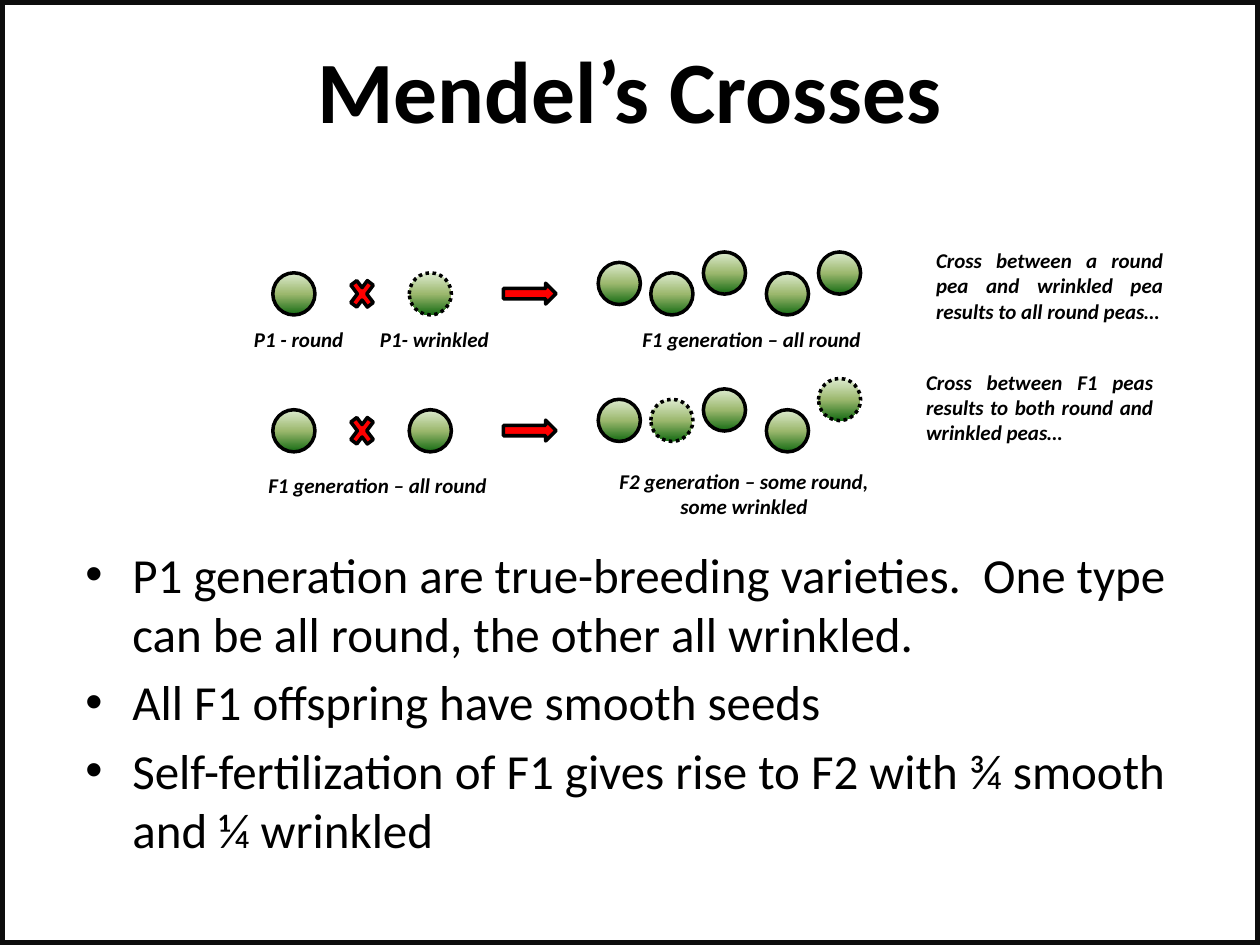
from copy import deepcopy

from pptx import Presentation
from pptx.dml.color import RGBColor
from pptx.enum.dml import MSO_LINE
from pptx.enum.shapes import MSO_SHAPE as SHAPE
from pptx.enum.text import MSO_ANCHOR as ANCHOR, PP_ALIGN as ALIGN
from pptx.oxml.ns import qn
from pptx.util import Cm, Pt

COLORS = {"ink": "000000", "frame": "0D0D0D", "red": "FF0000",
          "light": "DDEBCF", "mid": "9CB86E", "dark": "156B13"}
SHADES = [(0, "light"), (0.5, "mid"), (1, "dark")]
NOTE = {"size": Pt(12), "bold": True, "italic": True}
PEA = 0.85
STEP = 0.21  # vertical unit by which offspring are raised


def color(name):
    return RGBColor.from_string(COLORS[name])


def add_text(slide, box, lines, style, align=ALIGN.LEFT, wrap=True, anchor=ANCHOR.TOP):
    frame = slide.shapes.add_textbox(*map(Cm, box)).text_frame
    frame.word_wrap, frame.vertical_anchor = wrap, anchor
    for i, line in enumerate(lines):
        para = frame.paragraphs[0] if i == 0 else frame.add_paragraph()
        para.alignment = align
        run = para.add_run()
        run.text = line
        for key, value in {"name": "Calibri", **style}.items():
            setattr(run.font, key, value)
        run.font.color.rgb = color("ink")
    return frame


def add_mark(slide, kind, box, fill=None, line="ink", width=2):
    mark = slide.shapes.add_shape(kind, *map(Cm, box))
    mark.shadow.inherit = False
    mark.line.color.rgb = color(line)
    mark.line.width = Pt(width)
    if fill:
        mark.fill.solid()
        mark.fill.fore_color.rgb = color(fill)
    else:
        mark.fill.background()
    return mark


def add_pea(slide, x, y, wrinkled):
    pea = add_mark(slide, SHAPE.FLOWCHART_CONNECTOR, (x, y, PEA, PEA))
    pea.fill.gradient()
    pea.fill.gradient_angle = 270
    stops = pea.element.spPr.find(".//" + qn("a:gsLst"))
    stops.insert(1, deepcopy(stops[0]))
    for stop, (place, name) in zip(pea.fill.gradient_stops, SHADES):
        stop.position = place
        stop.color.rgb = color(name)
    if wrinkled:
        pea.line.dash_style = MSO_LINE.ROUND_DOT


def add_cross(slide, x, y, parents, young):
    """Draw parents, sign, arrow and offspring; 'w' is wrinkled, 'r' round."""
    for dx, kind in zip((0, 2.75), parents):
        add_pea(slide, x + dx, y, kind == "w")
    add_mark(slide, SHAPE.MATH_MULTIPLY, (x + 1.48, y, 0.64, PEA), "red")
    add_mark(slide, SHAPE.RIGHT_ARROW, (x + 4.65, y + STEP, 1.06, 0.42), "red")
    for dx, (kind, rise) in zip((6.56, 7.62, 8.68, 9.95, 11), young):
        add_pea(slide, x + dx, y - rise * STEP, kind == "w")


def add_labels(slide, x, y, labels):
    for dx, dy, wide, high, align, lines in labels:
        add_text(slide, (x + dx, y + dy, wide, high), lines, NOTE, align, wrap=False)


def add_bullets(slide, box, lines):
    frame = add_text(slide, box, lines, {"size": Pt(28)})
    for i, para in enumerate(frame.paragraphs):
        para.space_before = Pt(5.6 if i else 0)
        props = para._p.get_or_add_pPr()
        props.set("marL", str(Cm(0.95)))
        props.set("indent", str(-Cm(0.95)))
        font = props.makeelement(qn("a:buFont"), {"typeface": "Arial"})
        props.extend([font, props.makeelement(qn("a:buChar"), {"char": "•"})])


def main():
    deck = Presentation()
    deck.slide_width, deck.slide_height = Cm(25.4), Cm(19.05)
    slide = deck.slides.add_slide(deck.slide_layouts[6])

    add_mark(slide, SHAPE.RECTANGLE, (0, 0, 25.4, 19.05), line="frame", width=6)
    add_text(slide, (1.27, 0.2, 22.86, 3.18), ["Mendel’s Crosses"],
             {"size": Pt(50), "bold": True}, ALIGN.CENTER, anchor=ANCHOR.MIDDLE)

    left, first, second = 5.5, 5.5, 8.26
    add_cross(slide, left, first, "rw",
              [("r", 1), ("r", 0), ("r", 2), ("r", 0), ("r", 2)])
    add_labels(slide, left, first, [
        (-0.63, 0.95, 2.34, 0.76, ALIGN.LEFT, ["P1 - round"]),
        (1.91, 0.95, 2.74, 0.76, ALIGN.LEFT, ["P1- wrinkled"]),
        (7.2, 0.95, 5, 0.76, ALIGN.LEFT, ["F1 generation – all round"])])
    add_text(slide, (18.62, 4.87, 5.08, 1.8),
             ["Cross between a round pea and wrinkled pea results to all round peas…"],
             NOTE, ALIGN.JUSTIFY)

    add_cross(slide, left, second, "rr",
              [("r", 1), ("w", 1), ("r", 2), ("r", 0), ("w", 3)])
    add_labels(slide, left, second, [
        (-0.34, 1.14, 5, 0.76, ALIGN.LEFT, ["F1 generation – all round"]),
        (6.64, 1.06, 5.72, 1.27, ALIGN.CENTER,
         ["F2 generation – some round,", "some wrinkled"])])
    add_text(slide, (18.42, 7.32, 5.08, 1.8),
             ["Cross between F1 peas results to both round and wrinkled peas…"],
             NOTE, ALIGN.JUSTIFY)

    add_bullets(slide, (1.47, 10.85, 22.86, 7.5), [
        "P1 generation are true-breeding varieties.  One type can be all round, "
        "the other all wrinkled.",
        "All F1 offspring have smooth seeds",
        "Self-fertilization of F1 gives rise to F2 with ¾ smooth and ¼ wrinkled"])
    deck.save("out.pptx")


if __name__ == "__main__":
    main()
